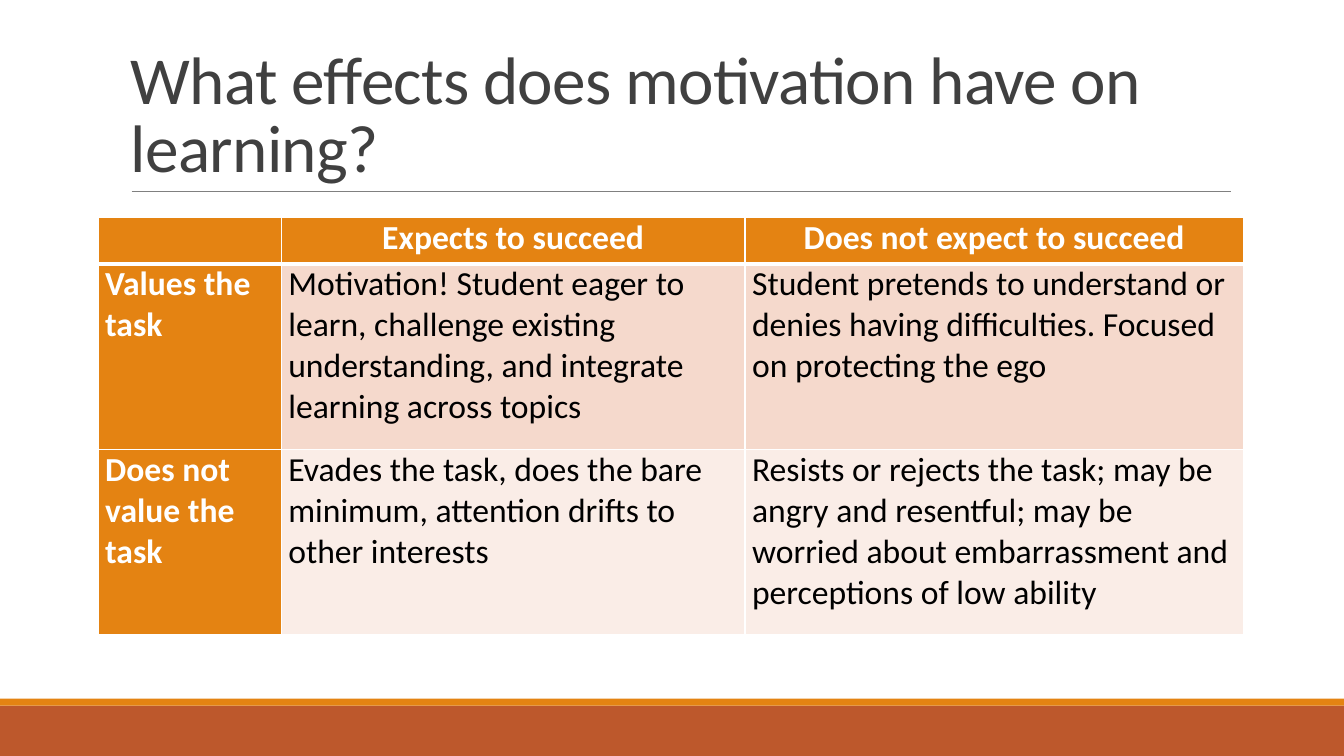
from dataclasses import dataclass

from lxml import etree
from pptx import Presentation
from pptx import util as u
from pptx.dml.color import RGBColor
from pptx.enum import shapes, text
from pptx.oxml import ns

SLIDE_W, SLIDE_H = 13.33, 7.5
FONT = "Calibri"
WHITE, BLACK, CHARCOAL, GREY = "FFFFFF", "000000", "404040", "808080"
ORANGE, RUST = "E48312", "BD582C"
ROW_TINTS = ["F5D9CC", "FAEDE7"]


@dataclass
class Box:
    """Area in inches, placed on the slide."""
    left: float
    top: float
    width: float
    height: float

    def emu(self) -> list[int]:
        return [u.Inches(n) for n in (self.left, self.top, self.width, self.height)]


@dataclass
class Band:
    top: float  # share of slide height
    height: float
    color: str


@dataclass
class Style:
    size: float
    color: str
    bold: bool = False


HEADING, BODY = Style(24, WHITE, True), Style(24, BLACK)

FOOTER_BANDS = [Band(14 / 15, 1 / 15, RUST), Band(0.924, 0.0095, ORANGE)]
COLUMN_SHARES = [0.16, 0.405, 0.435]
ROW_SHARES = [1 / 9, 4 / 9, 4 / 9]
MOTIVATION_GRID = [
    ["", "Expects to succeed", "Does not expect to succeed"],
    ["Values the task",
     "Motivation! Student eager to learn, challenge existing understanding, "
     "and integrate learning across topics",
     "Student pretends to understand or denies having difficulties. "
     "Focused on protecting the ego"],
    ["Does not value the task",
     "Evades the task, does the bare minimum, attention drifts to other interests",
     "Resists or rejects the task; may be angry and resentful; may be worried "
     "about embarrassment and perceptions of low ability"],
]


def rgb(color: str) -> RGBColor:
    return RGBColor.from_string(color)


def add_run(paragraph, wording: str, style: Style):
    run = paragraph.add_run()
    run.text = wording
    run.font.name, run.font.size = FONT, u.Pt(style.size)
    run.font.bold, run.font.color.rgb = style.bold, rgb(style.color)
    return run


def draw_band(slide, band: Band) -> None:
    area = Box(0, band.top * SLIDE_H, SLIDE_W, band.height * SLIDE_H)
    strip = slide.shapes.add_shape(shapes.MSO_SHAPE.RECTANGLE, *area.emu())
    strip.shadow.inherit = False
    strip.fill.solid()
    strip.fill.fore_color.rgb = rgb(band.color)
    strip.line.fill.background()


def draw_rule(slide, left: float, right: float, top: float) -> None:
    ends = [u.Inches(n) for n in (left, top, right, top)]
    rule = slide.shapes.add_connector(shapes.MSO_CONNECTOR.STRAIGHT, *ends)
    rule.line.color.rgb, rule.line.width = rgb(GREY), u.Pt(0.5)
    etree.SubElement(rule.element.spPr, ns.qn("a:effectLst"))


def draw_title(slide, wording: str, area: Box) -> None:
    frame = slide.shapes.add_textbox(*area.emu()).text_frame
    frame.word_wrap = True
    frame.vertical_anchor = text.MSO_ANCHOR.BOTTOM
    frame.paragraphs[0].line_spacing = 0.85
    run = add_run(frame.paragraphs[0], wording, Style(48, CHARCOAL))
    run.font._element.set("spc", "-50")


def add_borders(cell, header: bool, below_header: bool) -> None:
    widths = {"lnL": 1, "lnR": 1, "lnT": 3 if below_header else 1, "lnB": 3 if header else 1}
    for side, width in widths.items():
        edge = etree.SubElement(cell._tc.get_or_add_tcPr(), ns.qn(f"a:{side}"), w=str(u.Pt(width)))
        paint = etree.SubElement(edge, ns.qn("a:solidFill"))
        etree.SubElement(paint, ns.qn("a:srgbClr"), val=WHITE)


def fill_cell(cell, wording: str, row: int, column: int) -> None:
    heading = row == 0 or column == 0
    cell.margin_left = cell.margin_right = u.Inches(0.07)
    cell.margin_top = cell.margin_bottom = 0
    add_borders(cell, row == 0, row == 1)
    cell.fill.solid()
    cell.fill.fore_color.rgb = rgb(ORANGE if heading else ROW_TINTS[row - 1])
    paragraph = cell.text_frame.paragraphs[0]
    if row == 0:
        paragraph.alignment = text.PP_ALIGN.CENTER
    if wording:
        add_run(paragraph, wording, HEADING if heading else BODY)


def draw_grid(slide, area: Box) -> None:
    grid = slide.shapes.add_table(len(ROW_SHARES), len(COLUMN_SHARES), *area.emu()).table
    for column, share in zip(grid.columns, COLUMN_SHARES):
        column.width = u.Inches(area.width * share)
    for row, share in zip(grid.rows, ROW_SHARES):
        row.height = u.Inches(area.height * share)
    for r, wordings in enumerate(MOTIVATION_GRID):
        for c, wording in enumerate(wordings):
            fill_cell(grid.cell(r, c), wording, r, c)


def main() -> None:
    deck = Presentation()
    deck.slide_width, deck.slide_height = u.Inches(SLIDE_W), u.Inches(SLIDE_H)
    slide = deck.slides.add_slide(deck.slide_layouts[6])

    # Footer bands
    for band in FOOTER_BANDS:
        draw_band(slide, band)

    # Title with the rule under it
    title_area = Box(0.09 * SLIDE_W, 0.041 * SLIDE_H, 0.825 * SLIDE_W, 0.212 * SLIDE_H)
    draw_rule(slide, 0.098 * SLIDE_W, 0.916 * SLIDE_W, 0.253 * SLIDE_H)
    draw_title(slide, "What effects does motivation have on learning?", title_area)

    # Value and expectancy table
    draw_grid(slide, Box(0.073 * SLIDE_W, 0.288 * SLIDE_H, 0.852 * SLIDE_W, 0.551 * SLIDE_H))

    deck.save("out.pptx")


if __name__ == "__main__":
    main()
